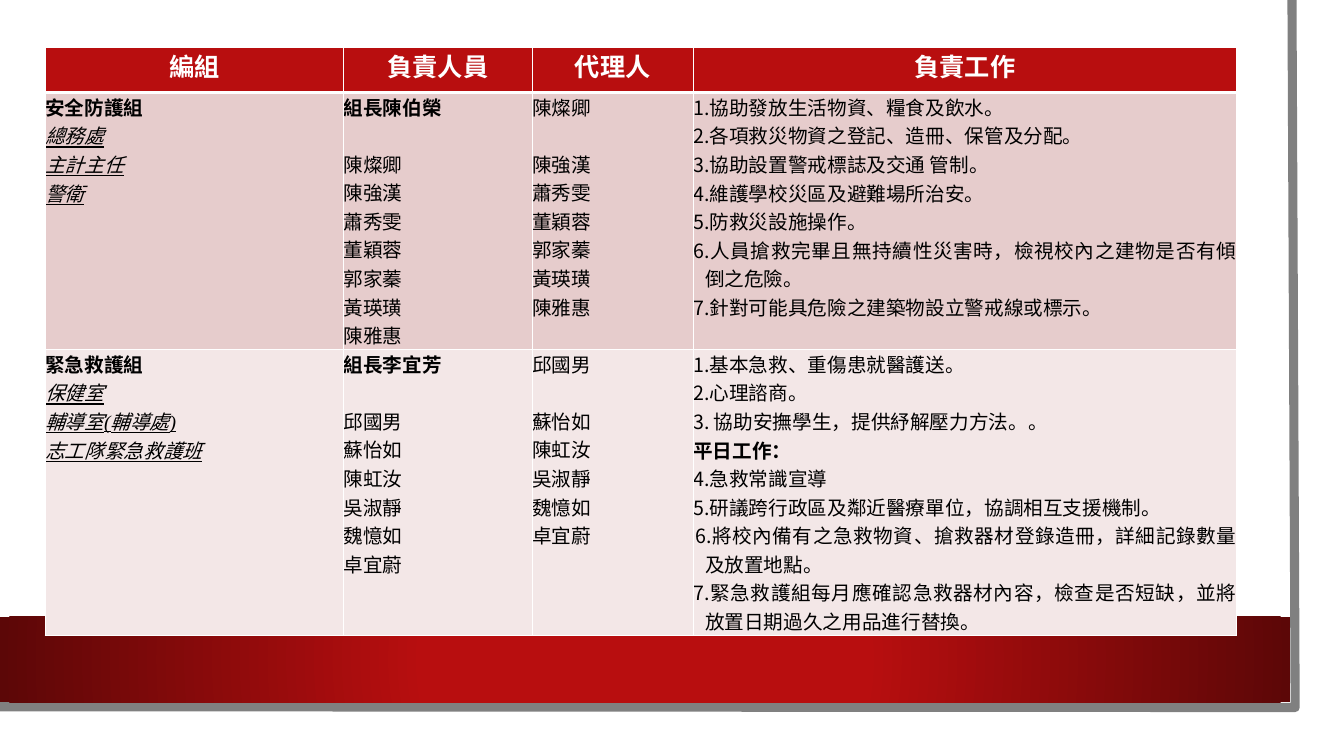
"""Build a slide with the duty table of two school emergency teams."""
from dataclasses import dataclass

from lxml import etree
from pptx import Presentation
from pptx import util as u
from pptx.dml import color
from pptx.enum import shapes, text
from pptx.oxml import ns

SANS, SERIF = "Noto Sans CJK TC", "Times New Roman"
WHITE, BLACK, RED, DARK_RED, GREY = "FFFFFF", "000000", "B80E0F", "5C0707", "808080"
COLUMN_WIDTHS = (7.52, 4.75, 4.06, 13.69)
ROW_HEIGHTS = (1.14, 4.8, 6.99)
HANG = 0.3
BLANK_LINE = 20.3


@dataclass(frozen=True)
class Line:
    """One paragraph of a table cell."""
    content: str
    number: str = ""
    bold: bool = False
    unit: bool = False
    size: float = 14
    colour: str = BLACK
    centred: bool = False
    left: float = 0
    first: float = 0
    before: float = 0


@dataclass(frozen=True)
class Row:
    """One table row: fill, bottom border width and the lines of each cell."""
    fill: str
    rule: float
    cells: list[list[Line]]


def rgb(value: str) -> color.RGBColor:
    """Turn a hex string into a colour."""
    return color.RGBColor.from_string(value)


def group(name: str, units: list[str]) -> list[Line]:
    """List a team and the units in it."""
    return [Line(name, bold=True)] + [Line(unit, unit=True) for unit in units]


def people(first: str, names: list[str], leader: bool = False) -> list[Line]:
    """List a first person, a one-line gap and the other people."""
    return [Line(first, bold=leader)] + [
        Line(name, before=0 if index else BLANK_LINE) for index, name in enumerate(names)]


def duty(number: str, content: str, left: float = HANG, first: float = -HANG) -> Line:
    """Describe a numbered duty."""
    return Line(content, number, left=left, first=first)


HEADINGS = ("編組", "負責人員", "代理人", "負責工作")
SAFETY_STAFF = ["陳強漢", "蕭秀雯", "董穎蓉", "郭家蓁", "黃瑛璜", "陳雅惠"]
AID_STAFF = ["蘇怡如", "陳虹汝", "吳淑靜", "魏憶如", "卓宜蔚"]
ROWS = [
    Row(RED, 3, [[Line(name, bold=True, size=18, colour=WHITE, centred=True)]
                 for name in HEADINGS]),
    Row("E6CCCC", 1, [
        group("安全防護組", ["總務處", "主計主任", "警衛"]),
        people("組長陳伯榮", ["陳燦卿"] + SAFETY_STAFF, leader=True),
        people("陳燦卿", SAFETY_STAFF),
        [
            duty("1.", "協助發放生活物資、糧食及飲水。"),
            duty("2.", "各項救災物資之登記、造冊、保管及分配。"),
            duty("3.", "協助設置警戒標誌及交通 管制。"),
            duty("4.", "維護學校災區及避難場所治安。"),
            duty("5.", "防救災設施操作。"),
            duty("6.", "人員搶救完畢且無持續性災害時，檢視校內之建物是否有傾倒之危險。"),
            duty("7.", "針對可能具危險之建築物設立警戒線或標示。"),
        ],
    ]),
    Row("F3E7E7", 1, [
        group("緊急救護組", ["保健室", "輔導室(輔導處)", "志工隊緊急救護班"]),
        people("組長李宜芳", ["邱國男"] + AID_STAFF, leader=True),
        people("邱國男", AID_STAFF),
        [
            duty("1.", "基本急救、重傷患就醫護送。"),
            duty("2.", "心理諮商。"),
            duty("3. ", "協助安撫學生，提供紓解壓力方法。。"),
            Line("平日工作：", bold=True),
            duty("4.", "急救常識宣導", left=0, first=0),
            duty("5.", "研議跨行政區及鄰近醫療單位，協調相互支援機制。", left=0, first=0),
            duty("6.", "將校內備有之急救物資、搶救器材登錄造冊，詳細記錄數量及放置地點。",
                 first=-0.25),
            duty("7.", "緊急救護組每月應確認急救器材內容，檢查是否短缺，並將放置日期過久之用品進行替換。"),
        ],
    ]),
]


def add_span(para, content: str, line: Line, font_name: str) -> None:
    """Add a formatted run to a paragraph."""
    span = para.add_run()
    span.text = content
    values = {"name": font_name, "size": u.Pt(line.size), "bold": line.bold,
              "italic": line.unit, "underline": line.unit}
    for key, value in values.items():
        setattr(span.font, key, value)
    span.font.color.rgb = rgb(line.colour)
    east = etree.SubElement(span.font._element, ns.qn("a:ea"))
    east.set("typeface", SANS)


def write_line(para, line: Line) -> None:
    """Write one line of a cell into a paragraph."""
    para.alignment = text.PP_ALIGN.CENTER if line.centred else text.PP_ALIGN.JUSTIFY
    if line.before:
        para.space_before = u.Pt(line.before)
    properties = para._p.get_or_add_pPr()
    properties.set("marL", str(u.Cm(line.left)))
    properties.set("indent", str(u.Cm(line.first)))
    if line.number:
        add_span(para, line.number, line, SANS)
    add_span(para, line.content, line, SERIF)


def set_borders(cell, top: float, bottom: float) -> None:
    """Draw white borders around a cell."""
    properties = cell._tc.get_or_add_tcPr()
    widths = {"a:lnL": 1, "a:lnR": 1, "a:lnT": top, "a:lnB": bottom}
    for tag, width in widths.items():
        border = etree.SubElement(properties, ns.qn(tag), w=str(u.Pt(width)))
        fill = etree.SubElement(border, ns.qn("a:solidFill"))
        etree.SubElement(fill, ns.qn("a:srgbClr"), val=WHITE)


def add_duty_table(page) -> None:
    """Add the table of teams, people and duties."""
    frame = page.shapes.add_table(len(ROWS), len(COLUMN_WIDTHS), u.Cm(1.14), u.Cm(1.19),
                                  u.Cm(sum(COLUMN_WIDTHS)), u.Cm(sum(ROW_HEIGHTS)))
    table = frame.table
    table.horz_banding = False
    for column, width in zip(table.columns, COLUMN_WIDTHS):
        column.width = u.Cm(width)
    top = 1
    for table_row, height, row in zip(table.rows, ROW_HEIGHTS, ROWS):
        table_row.height = u.Cm(height)
        for cell, lines in zip(table_row.cells, row.cells):
            for side in ("left", "top", "right", "bottom"):
                setattr(cell, f"margin_{side}", 0)
            set_borders(cell, top, row.rule)
            cell.fill.solid()
            cell.fill.fore_color.rgb = rgb(row.fill)
            for index, line in enumerate(lines):
                frame_text = cell.text_frame
                write_line(frame_text.add_paragraph() if index else frame_text.paragraphs[0], line)
        top = row.rule


def add_panel(page, top: float, width: float, height: float):
    """Add a plain white rectangle at the left edge of the page."""
    box = page.shapes.add_shape(shapes.MSO_SHAPE.RECTANGLE, 0, u.Cm(top),
                                u.Cm(width), u.Cm(height))
    box.shadow.inherit = False
    box.line.fill.background()
    box.fill.solid()
    box.fill.fore_color.rgb = rgb(WHITE)
    return box


def add_backdrop(page) -> None:
    """Add the white sheet, its grey edge and the red band."""
    add_panel(page, 0, 33.27, 18.47)
    builder = page.shapes.build_freeform(u.Cm(32.56), 0)
    builder.add_line_segments([(u.Cm(32.64), u.Cm(17.83)), (u.Cm(-0.08), u.Cm(17.81))],
                              close=False)
    edge = builder.convert_to_shape()
    edge.shadow.inherit = False
    edge.fill.background()
    edge.line.color.rgb = rgb(GREY)
    edge.line.width = u.Pt(6.5)

    band = add_panel(page, 15.54, 32.51, 2.16)
    solid = band._element.spPr.find(ns.qn("a:solidFill"))
    gradient = etree.Element(ns.qn("a:gradFill"), rotWithShape="1")
    stops = etree.SubElement(gradient, ns.qn("a:gsLst"))
    for position, value in ((34, RED), (100, DARK_RED)):
        stop = etree.SubElement(stops, ns.qn("a:gs"), pos=str(position * 1000))
        etree.SubElement(stop, ns.qn("a:srgbClr"), val=value)
    circle = etree.SubElement(gradient, ns.qn("a:path"), {"path": "circle"})
    etree.SubElement(circle, ns.qn("a:fillToRect"), l="50000", t="50000", r="50000", b="50000")
    solid.getparent().replace(solid, gradient)


def main() -> None:
    """Build the deck and save it."""
    deck = Presentation()
    deck.slide_width, deck.slide_height = u.Cm(33.87), u.Cm(19.05)
    page = deck.slides.add_slide(deck.slide_layouts[6])
    add_backdrop(page)
    add_duty_table(page)
    deck.save("out.pptx")


if __name__ == "__main__":
    main()
